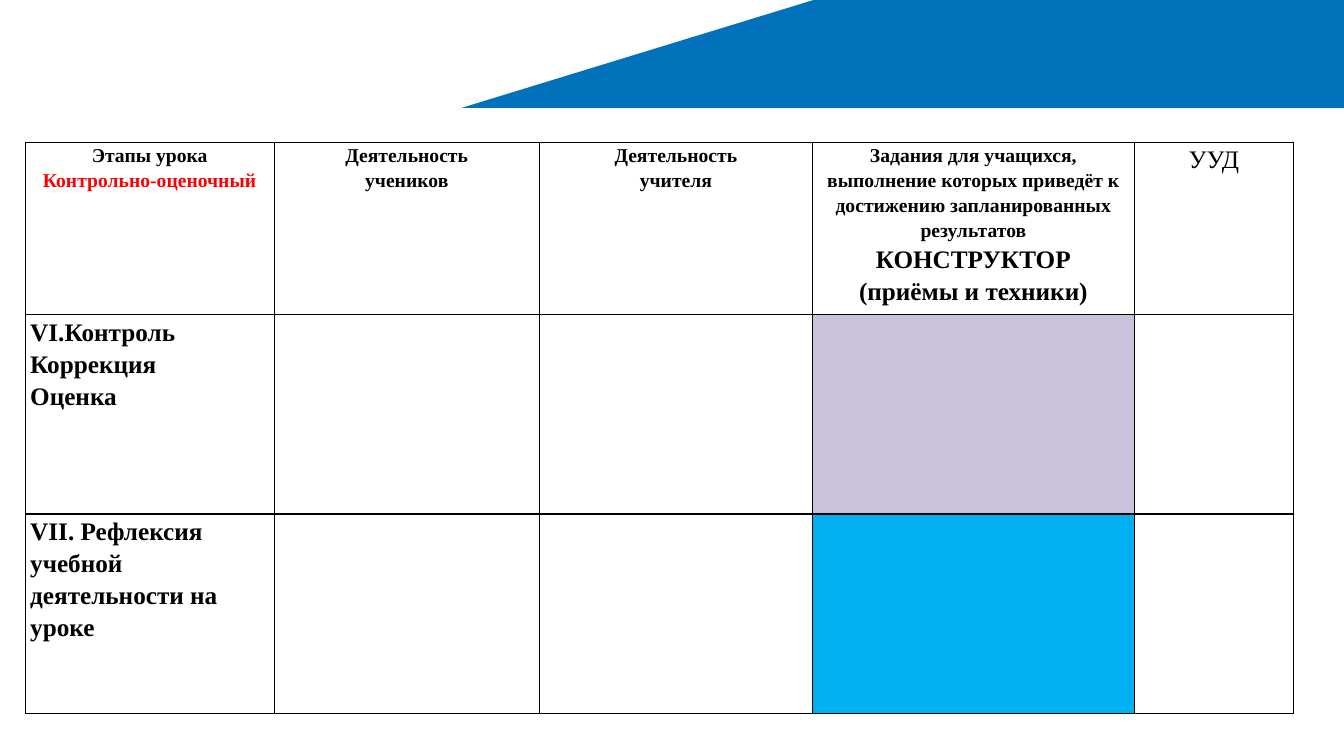
from lxml.etree import SubElement
from pptx import Presentation
from pptx.dml.color import RGBColor
from pptx.enum.text import PP_ALIGN
from pptx.oxml.ns import qn
from pptx.util import Inches, Pt

COLORS = {
    "banner": "0071BB",
    "black": "000000",
    "red": "FF0000",
    "white": "FFFFFF",
    "lilac": "CCC1DA",
    "sky": "00B0F0",
}
FONT = "Times New Roman"
SLIDE_WIDTH, SLIDE_HEIGHT = 13.33, 7.5
BANNER_HEIGHT = 1.07
TABLE_LEFT, TABLE_TOP = 0.25, 1.41
COLUMN_WIDTHS = [2.47, 2.63, 2.71, 3.19, 1.58]
ROW_HEIGHTS = [1.71, 1.98, 1.98]


def write(cell, text, size=14, bold=True, color="black", align=PP_ALIGN.CENTER):
    frame = cell.text_frame
    paragraph = frame.add_paragraph() if frame.text else frame.paragraphs[0]
    paragraph.alignment = align
    paragraph.line_spacing = 1.15
    run = paragraph.add_run()
    run.text = text
    run.font.name = FONT
    run.font.size = Pt(size)
    run.font.bold = bold
    run.font.color.rgb = RGBColor.from_string(COLORS[color])


def add_border(cell, side):
    line = SubElement(cell._tc.get_or_add_tcPr(), qn(f"a:{side}"), w=str(Pt(1)))
    fill = SubElement(line, qn("a:solidFill"))
    SubElement(fill, qn("a:srgbClr"), val=COLORS["black"])


presentation = Presentation()
presentation.slide_width = Inches(SLIDE_WIDTH)
presentation.slide_height = Inches(SLIDE_HEIGHT)
slide = presentation.slides.add_slide(presentation.slide_layouts[6])

builder = slide.shapes.build_freeform(Inches(SLIDE_WIDTH), 0)
corners = [(8.07, 0), (4.58, BANNER_HEIGHT), (SLIDE_WIDTH, BANNER_HEIGHT)]
builder.add_line_segments([(Inches(x), Inches(y)) for x, y in corners], close=True)
banner = builder.convert_to_shape()
banner.shadow.inherit = False
banner.fill.solid()
banner.fill.fore_color.rgb = RGBColor.from_string(COLORS["banner"])
banner.line.fill.background()

table = slide.shapes.add_table(
    len(ROW_HEIGHTS), len(COLUMN_WIDTHS),
    Inches(TABLE_LEFT), Inches(TABLE_TOP),
    Inches(sum(COLUMN_WIDTHS)), Inches(sum(ROW_HEIGHTS)),
).table
table.first_row = False
table.horz_banding = False
for column, width in zip(table.columns, COLUMN_WIDTHS):
    column.width = Inches(width)
for row, height in zip(table.rows, ROW_HEIGHTS):
    row.height = Inches(height)

cell_fills = {(1, 3): "lilac", (2, 3): "sky"}
for row_index, row in enumerate(table.rows):
    for column_index, cell in enumerate(row.cells):
        cell.margin_left = cell.margin_right = Inches(0.05)
        cell.margin_top = cell.margin_bottom = 0
        for side in ("lnL", "lnR", "lnT", "lnB"):
            add_border(cell, side)
        fill_name = cell_fills.get((row_index, column_index), "white")
        cell.fill.solid()
        cell.fill.fore_color.rgb = RGBColor.from_string(COLORS[fill_name])

task_heading = (
    "Задания для учащихся, выполнение которых приведёт к "
    "достижению запланированных результатов"
)
headings = [
    [("Этапы урока", {}), ("Контрольно-оценочный", {"color": "red"})],
    [("Деятельность", {}), ("учеников", {})],
    [("Деятельность", {}), ("учителя", {})],
    [
        (task_heading, {}),
        ("КОНСТРУКТОР", {"size": 18}),
        ("(приёмы и техники)", {"size": 18}),
    ],
    [("УУД", {"size": 18, "bold": False})],
]
for column_index, paragraphs in enumerate(headings):
    for text, style in paragraphs:
        write(table.cell(0, column_index), text, **style)

stages = [
    (["VI.Контроль", "Коррекция", "Оценка"], PP_ALIGN.JUSTIFY),
    (["VII. Рефлексия учебной деятельности на уроке"], PP_ALIGN.LEFT),
]
for row_index, (paragraphs, align) in enumerate(stages, start=1):
    for text in paragraphs:
        write(table.cell(row_index, 0), text, size=18, align=align)

presentation.save("out.pptx")
